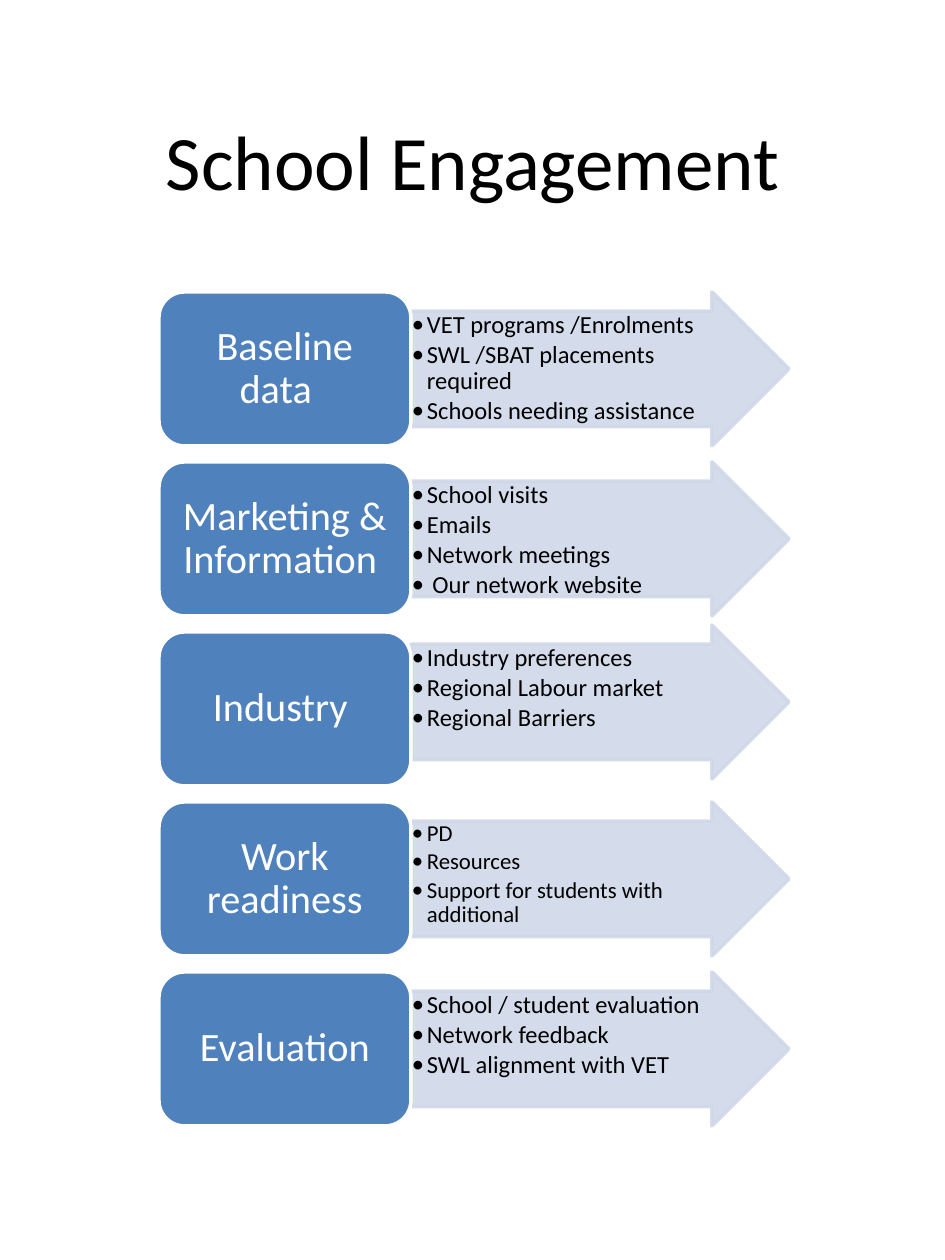
from lxml.etree import SubElement as Sub
from pptx import Presentation
from pptx.dml.color import RGBColor
from pptx.enum.shapes import MSO_SHAPE as Shape
from pptx.enum.text import MSO_ANCHOR as Anchor, PP_ALIGN as Align
from pptx.oxml.ns import qn
from pptx.util import Emu, Pt

# Content: label, bullet size, arrow shift in px, bullets
TITLE = "School Engagement"
ROWS = [
    ("Baseline data  ", 14, 0,
     ["VET programs /Enrolments", "SWL /SBAT placements required",
      "Schools needing assistance"]),
    ("Marketing & Information ", 14, 0,
     ["School visits", "Emails", "Network meetings", " Our network website"]),
    ("Industry ", 14, -7,
     ["Industry preferences", "Regional Labour market", "Regional Barriers"]),
    ("Work readiness", 13, 0,
     ["PD", "Resources", "Support for students with additional"]),
    ("Evaluation", 14, 0,
     ["School / student evaluation", "Network feedback",
      "SWL alignment with VET"]),
]

BLUE = RGBColor(0x4F, 0x81, 0xBD)
PALE = RGBColor(0xD0, 0xD8, 0xE8)
WHITE = RGBColor(0xFF, 0xFF, 0xFF)
BLACK = RGBColor(0, 0, 0)
FONT = "Calibri"

# Layout in px
LEFT, TOP, PITCH = 159, 292, 170
LABEL_W, ARROW_W, HIGH = 252, 378, 154
INDENT = 15


def px(n):
    return Emu(round(n * 914400 / 126))


def write(shape, lines, size, color, align=Align.CENTER, anchor=Anchor.MIDDLE,
          inset=(13, 6), space=1.0, after=0, bullet=False):
    frame = shape.text_frame
    frame.word_wrap = True
    frame.vertical_anchor = anchor
    frame.margin_left = frame.margin_right = px(inset[0])
    frame.margin_top = frame.margin_bottom = px(inset[1])
    for i, line in enumerate(lines):
        para = frame.add_paragraph() if i else frame.paragraphs[0]
        para.alignment = align
        para.line_spacing = space
        para.space_after = Pt(after)
        run = para.add_run()
        run.text = line
        run.font.size = Pt(size)
        run.font.name = FONT
        run.font.color.rgb = color
        if bullet:
            props = para._p.get_or_add_pPr()
            props.set("marL", str(px(INDENT)))
            props.set("indent", str(-px(INDENT)))
            Sub(props, qn("a:buFont"), typeface=FONT)
            Sub(props, qn("a:buChar"), char="•")


def draw(kind, x, y, w, fill, line, alpha=100):
    shape = slide.shapes.add_shape(kind, px(x), px(y), px(w), px(HIGH))
    shape.shadow.inherit = False
    shape.fill.solid()
    shape.fill.fore_color.rgb = fill
    shape.line.color.rgb = line
    shape.line.width = Pt(2)
    if alpha < 100:
        for tint in shape._element.spPr.iter(qn("a:srgbClr")):
            Sub(tint, qn("a:alpha"), val=str(alpha * 1000))
    return shape


deck = Presentation()
deck.slide_width, deck.slide_height = px(945), px(1260)
slide = deck.slides.add_slide(deck.slide_layouts[6])

# Rows: arrow with bullets, then its label
for i, (label, size, shift, items) in enumerate(ROWS):
    y = TOP + i * PITCH
    arrow = draw(Shape.RIGHT_ARROW, LEFT + LABEL_W, y + shift, ARROW_W,
                 PALE, PALE, alpha=90)
    arrow.adjustments[0] = 0.75
    arrow.adjustments[1] = 0.5
    write(arrow, items, size, BLACK, align=Align.LEFT, anchor=Anchor.TOP,
          inset=(1, 1), space=0.9, after=2, bullet=True)
    box = draw(Shape.ROUNDED_RECTANGLE, LEFT, y, LABEL_W, BLUE, WHITE)
    write(box, [label], 23, WHITE, space=0.9)

# Title
head = slide.shapes.add_textbox(px(106), px(108), px(734), px(106))
write(head, [TITLE], 44, BLACK, anchor=Anchor.TOP)

deck.save("out.pptx")
